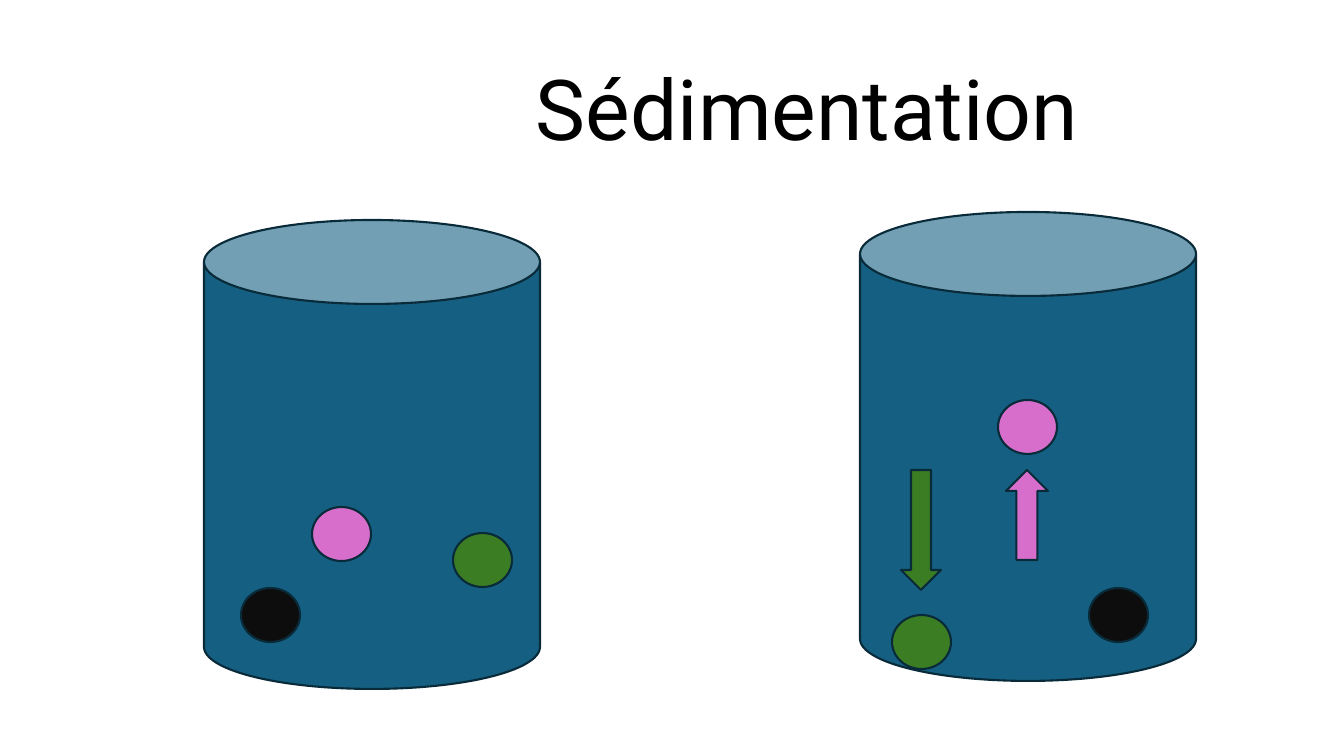
from pptx import Presentation
from pptx.dml.color import RGBColor
from pptx.enum.shapes import MSO_SHAPE as Shape
from pptx.enum.text import MSO_ANCHOR as Anchor, MSO_AUTO_SIZE as AutoSize, PP_ALIGN as Align
from pptx.util import Pt

WIDTH, HEIGHT = 1344, 756
SCALE = 12192000 / WIDTH  # EMU per px
TITLE_ONLY = 5

WATER, OUTLINE = "156082", "092A39"
BLACK, GREEN, PINK = "0D0D0D", "3B7D23", "D86ECC"
CAN_SIZE = (336, 469)
BALL_SIZE = (59, 54)


def emu(px):
    return round(px * SCALE)


def color(value):
    return RGBColor.from_string(value)


def apply(target, formats):
    for name, value in formats.items():
        setattr(target, name, value)


class SlideBuilder:
    """Holds the style and the current slide."""

    font = {"name": "Roboto", "size": Pt(60), "bold": False}
    line_width = Pt(1.5)

    def __init__(self, presentation):
        self.slide = presentation.slides.add_slide(presentation.slide_layouts[TITLE_ONLY])

    def title(self, text, left, top, width, height, inset):
        shape = self.slide.shapes.title
        apply(shape, {"left": emu(left), "top": emu(top),
                      "width": emu(width), "height": emu(height)})
        apply(shape.text_frame, {"text": text, "margin_left": emu(inset), "word_wrap": True,
                                 "auto_size": AutoSize.NONE, "vertical_anchor": Anchor.MIDDLE})
        paragraph = shape.text_frame.paragraphs[0]
        apply(paragraph, {"alignment": Align.LEFT, "line_spacing": 0.9})
        font = paragraph.runs[0].font
        apply(font, self.font)
        font.color.rgb = color("000000")

    def shape(self, kind, position, size, fill):
        shape = self.slide.shapes.add_shape(kind, *map(emu, position + size))
        shape.shadow.inherit = False
        shape.fill.solid()
        shape.fill.fore_color.rgb = color(fill)
        shape.line.color.rgb = color(OUTLINE)
        shape.line.width = self.line_width

    def can(self, position):
        self.shape(Shape.CAN, position, CAN_SIZE, WATER)

    def ball(self, position, fill):
        self.shape(Shape.OVAL, position, BALL_SIZE, fill)


def main():
    presentation = Presentation()
    apply(presentation, {"slide_width": emu(WIDTH), "slide_height": emu(HEIGHT)})
    builder = SlideBuilder(presentation)

    # Title, set in from the left
    builder.title("Sédimentation", 93, 40, 1159, 146, inset=443)

    # Containers before and after settling
    for position in [(204, 220), (860, 212)]:
        builder.can(position)

    # Particles: place before, place after
    particles = {
        BLACK: [(241, 588), (1089, 588)],
        GREEN: [(453, 533), (892, 615)],
        PINK: [(312, 507), (998, 400)],
    }
    for fill, positions in particles.items():
        for position in positions:
            builder.ball(position, fill)

    # Directions of movement
    builder.shape(Shape.UP_ARROW, (1006, 470), (42, 90), PINK)
    builder.shape(Shape.DOWN_ARROW, (901, 470), (40, 120), GREEN)

    presentation.save("out.pptx")


if __name__ == "__main__":
    main()
